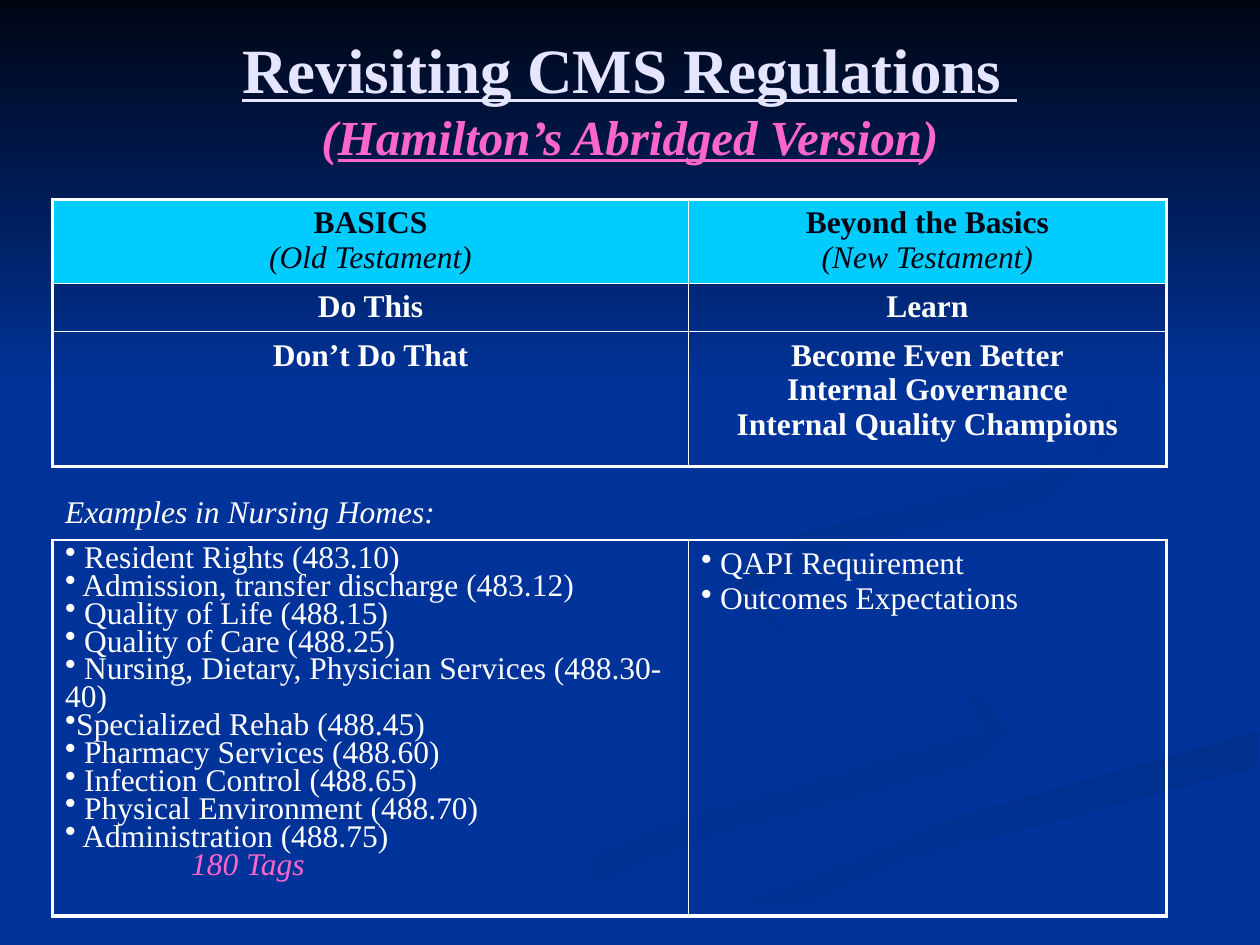
"""Build the CMS regulations slide: title, swoosh backdrop and comparison table."""
import pptx
import pptx.dml.color
import pptx.enum.shapes
import pptx.enum.text
import pptx.oxml
import pptx.oxml.ns
import pptx.util

Pt = pptx.util.Pt
CENTER = pptx.enum.text.PP_ALIGN.CENTER
FONT = "Times New Roman"
COLORS = {
    "blue": "003399", "night": "000514", "white": "FFFFFF", "lavender": "E5E5FF",
    "pink": "FF66CC", "cyan": "00CCFF", "shade": "003193", "deep shade": "002F8C",
}
RGB = {name: pptx.dml.color.RGBColor.from_string(code) for name, code in COLORS.items()}


def paint(shape, start, end, angle):
    """Give a backdrop shape its gradient, with no line and no shadow."""
    shape.shadow.inherit = False
    shape.line.fill.background()
    shape.fill.gradient()
    shape.fill.gradient_angle = 360 - angle
    for stop, color in zip(shape.fill.gradient_stops, (start, end)):
        stop.color.rgb = RGB[color]


def set_border(cell, side, width):
    """Draw one white cell edge; a width of 0 hides it."""
    fill = f'<a:solidFill><a:srgbClr val="{COLORS["white"]}"/></a:solidFill>' if width else "<a:noFill/>"
    cell._tc.get_or_add_tcPr().append(pptx.oxml.parse_xml(
        f'<a:ln{side} {pptx.oxml.ns.nsdecls("a")} w="{int(Pt(width))}">{fill}</a:ln{side}>'))


deck = pptx.Presentation()
deck.slide_width, deck.slide_height = Pt(720), Pt(540)
slide = deck.slides.add_slide(deck.slide_layouts[5])
slide.background.fill.solid()
slide.background.fill.fore_color.rgb = RGB["blue"]

swooshes = [
    ("blue", "shade", 0, [
        (562, 398), (433, 353), (414, 330), (427, 354), (549, 394), (562, 417),
        (388, 467), (216, 539), (260, 539), (406, 479), (562, 436), (576, 418)]),
    ("deep shade", "blue", 90, [
        (362, 539), (411, 539), (520, 491), (719, 438), (719, 418), (550, 466)]),
    ("blue", "blue", 0, [
        (522, 334), (546, 359), (652, 389), (679, 410), (642, 436), (507, 472),
        (343, 539), (362, 539), (550, 466), (719, 418), (719, 387), (611, 362),
        (562, 333), (592, 312), (719, 289), (719, 279), (544, 311)]),
    ("deep shade", "blue", 45, [
        (492, 310), (594, 289), (644, 248), (622, 210), (549, 168), (631, 220),
        (626, 263), (459, 304), (416, 337), (448, 360), (427, 338)]),
]
for start, end, angle, outline in swooshes:
    builder = slide.shapes.build_freeform(*outline[0], scale=Pt(1))
    builder.add_line_segments(outline[1:], close=True)
    paint(builder.convert_to_shape(), start, end, angle)

night_sky = slide.shapes.add_shape(
    pptx.enum.shapes.MSO_SHAPE.RECTANGLE, Pt(0), Pt(0), Pt(720), Pt(222))
paint(night_sky, "night", "blue", 90)

title = slide.shapes.title
slide.shapes._spTree.append(title._element)
title.left, title.top, title.width, title.height = Pt(36), Pt(21.6), Pt(648), Pt(68.4)
title.text_frame.auto_size = pptx.enum.text.MSO_AUTO_SIZE.NONE
title.text_frame.vertical_anchor = pptx.enum.text.MSO_ANCHOR.MIDDLE
heading = title.text_frame.paragraphs[0]
heading.alignment = CENTER
heading.font.name, heading.font.bold = FONT, True
for text, size, color, underline, italic in [
    ("Revisiting CMS Regulations ", 36, "lavender", True, False),
    ("(", 28, "pink", False, True),
    ("Hamilton’s Abridged Version", 28, "pink", True, True),
    (")", 28, "pink", False, True),
]:
    part = heading.add_run()
    part.text = text
    part.font.size, part.font.color.rgb = Pt(size), RGB[color]
    part.font.underline, part.font.italic = underline, italic
    if color == "lavender":
        heading.add_line_break()

rows = [
    (48, [["BASICS", "(Old Testament)"], ["Beyond the Basics", "(New Testament)"]]),
    (27.5, [["Do This"], ["Learn"]]),
    (77, [["Don’t Do That"],
          ["Become Even Better", "Internal Governance", "Internal Quality Champions"]]),
    (42, [["Examples in Nursing Homes:"], []]),
    (215, [[" Resident Rights (483.10)", " Admission, transfer discharge (483.12)",
            " Quality of Life (488.15)", " Quality of Care (488.25)",
            " Nursing, Dietary, Physician Services (488.30-40)", "Specialized Rehab (488.45)",
            " Pharmacy Services (488.60)", " Infection Control (488.65)",
            " Physical Environment (488.70)", " Administration (488.75)", "180 Tags"],
           [" QAPI Requirement", " Outcomes Expectations"]]),
]
HEADER, LAST_RULE, EXAMPLES, LISTS = 0, 2, 3, 4
comparison = slide.shapes.add_table(
    len(rows), 2, Pt(30), Pt(114), Pt(636.5), Pt(sum(height for height, _ in rows))).table
comparison.first_row = comparison.horz_banding = False
comparison.columns[0].width, comparison.columns[1].width = Pt(363.5), Pt(273)

for r, (height, texts) in enumerate(rows):
    comparison.rows[r].height = Pt(height)
    outer, inner = (0, 0) if r == EXAMPLES else (2.25, 1)
    for c, lines in enumerate(texts):
        cell = comparison.cell(r, c)
        set_border(cell, "L", inner if c else outer)
        set_border(cell, "R", outer if c else inner)
        set_border(cell, "T", 2.25 if r in (HEADER, EXAMPLES) else 1)
        set_border(cell, "B", 2.25 if r in (LAST_RULE, LISTS) else 1)
        if r == HEADER:
            cell.fill.solid()
            cell.fill.fore_color.rgb = RGB["cyan"]
        else:
            cell.fill.background()
        for i, text in enumerate(lines):
            frame = cell.text_frame
            line = frame.add_paragraph() if i else frame.paragraphs[0]
            line.text = text
            tags = text == "180 Tags"
            subtitle = r == HEADER and i == 1
            line.font.name, line.font.size = FONT, Pt(18)
            line.font.color.rgb = RGB["night" if r == HEADER else "pink" if tags else "white"]
            line.font.bold = r < EXAMPLES and not subtitle
            line.font.italic = subtitle or r == EXAMPLES or tags
            if r < EXAMPLES:
                line.alignment = CENTER
            elif c == 0:
                line.line_spacing = 0.8
            if tags:
                line._p.get_or_add_pPr().set("marL", str(int(Pt(72))))
            elif r == LISTS:
                bullet = f'<a:buChar {pptx.oxml.ns.nsdecls("a")} char="•"/>'
                line._p.get_or_add_pPr().insert_element_before(
                    pptx.oxml.parse_xml(bullet), "a:tabLst", "a:defRPr", "a:extLst")

comparison.cell(EXAMPLES, 0).merge(comparison.cell(EXAMPLES, 1))
comparison.cell(EXAMPLES, 0).margin_top = Pt(20)

deck.save("out.pptx")
